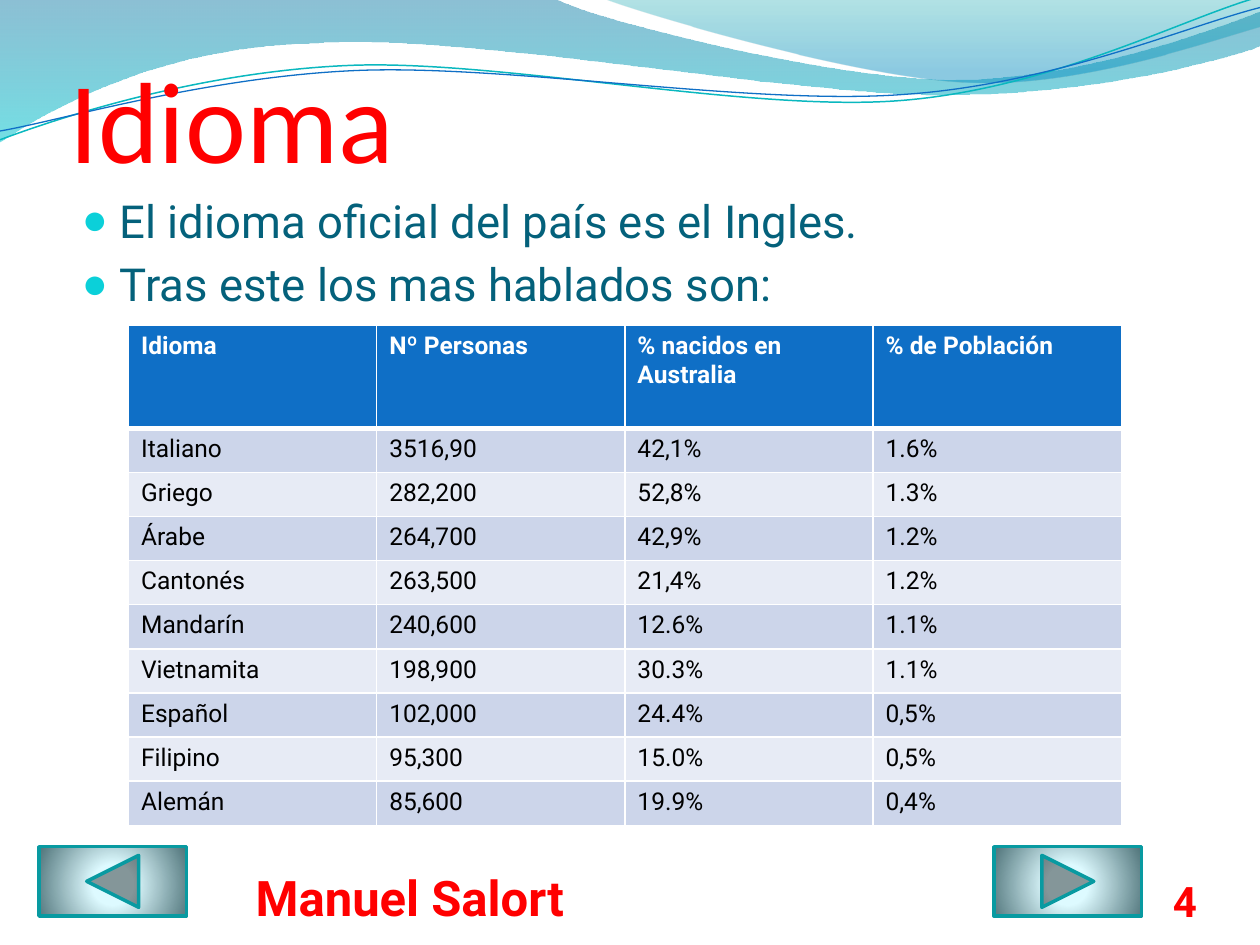
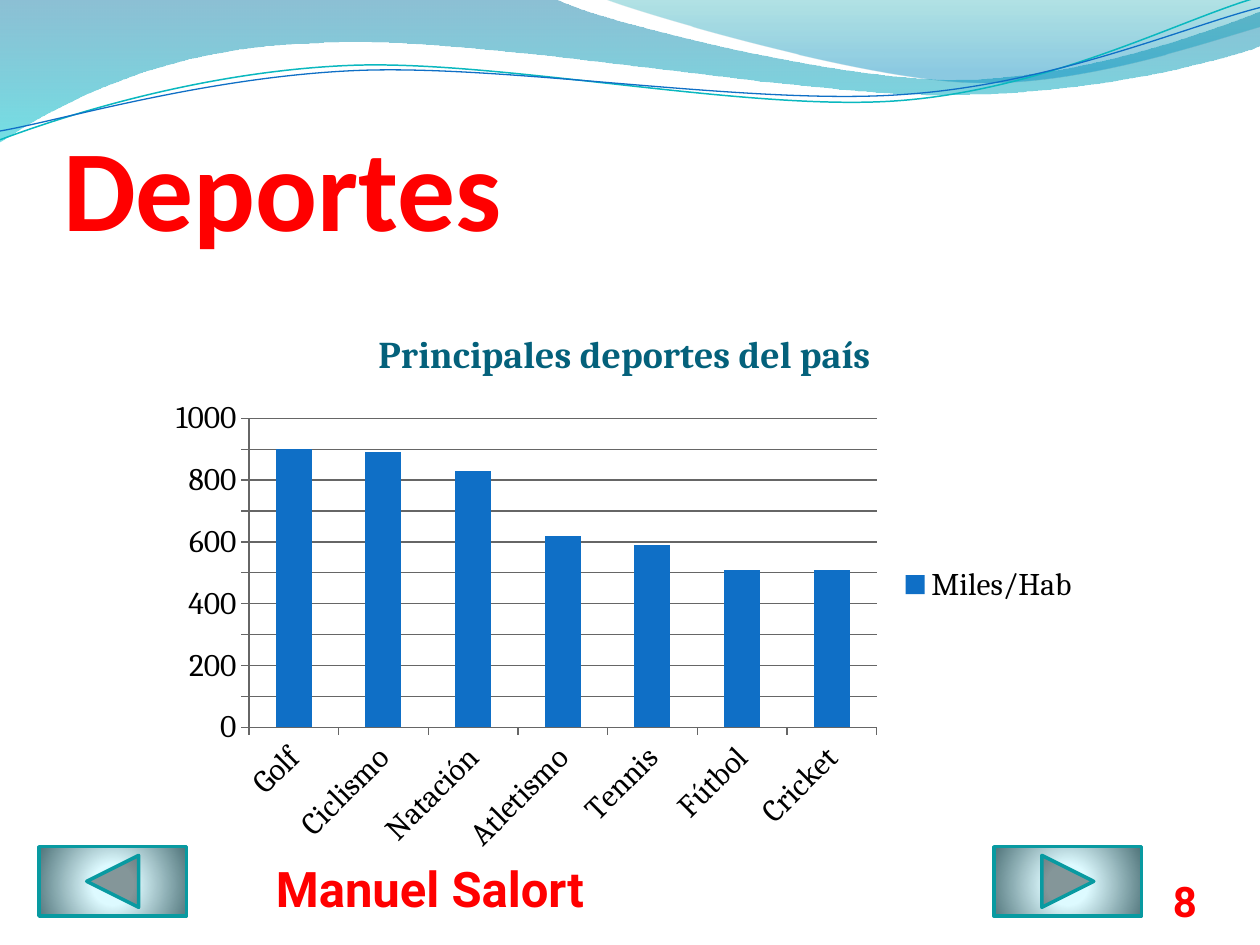
import lxml.etree
import pptx
import pptx.chart.data
import pptx.dml.color
import pptx.enum.chart
import pptx.enum.shapes
import pptx.enum.text
import pptx.oxml
import pptx.oxml.ns
import pptx.util

Inches = pptx.util.Inches
Pt = pptx.util.Pt
RGBColor = pptx.dml.color.RGBColor
SHAPES = pptx.enum.shapes.MSO_SHAPE
ALIGN = pptx.enum.text.PP_ALIGN
ANCHOR = pptx.enum.text.MSO_ANCHOR
qn = pptx.oxml.ns.qn

RED = RGBColor(0xFF, 0x00, 0x00)
TEAL_TEXT = RGBColor(0x04, 0x61, 0x7B)
BLUE = RGBColor(0x0F, 0x6F, 0xC6)
TURQUOISE = RGBColor(0x0A, 0xB8, 0xBF)
BULLET = RGBColor(0x0B, 0xD0, 0xD9)
BUTTON_EDGE = RGBColor(0x08, 0x9A, 0xA1)
BAND_DARK = RGBColor(0xCC, 0xD5, 0xEA)
BAND_LIGHT = RGBColor(0xE7, 0xEB, 0xF5)
AXIS_GRAY = RGBColor(0x66, 0x66, 0x66)
BLACK = RGBColor(0x00, 0x00, 0x00)
WHITE = RGBColor(0xFF, 0xFF, 0xFF)

DOWNWARD = '<a:lin ang="5400000" scaled="0"/>'
CIRCULAR = ('<a:path path="circle"><a:fillToRect l="10000" t="110000" '
            'r="10000" b="100000"/></a:path>')
BUTTON_STOPS = [(0, "DEFBFF", 100), (25, "DDFAFF", 100), (100, "52767C", 100)]

# Each wave: gradient stops (position, colour, opacity), line colour and width,
# then its outline, where 2 numbers are a point and 6 are a Bézier curve.
WAVES = [
    ([(0, "0074A1", 45), (100, "00C6CF", 55)], None, 0,
     [(0, 0), (4.4, -0.01), (4.76, 0.17, 6.64, 0.63, 7.58, 0.63),
      (8.53, 0.63, 9.58, 0.26, 10, 0.09), (10.01, 0.36),
      (9.83, 0.44, 8.7, 0.76, 7.46, 0.75), (6.22, 0.75, 3.82, 0.28, 2.57, 0.34),
      (1.29, 0.36, 0.46, 0.83, -0.01, 1.13)]),
    ([(0, "00A1A9", 30), (80, "008BBF", 45)], None, 0,
     [(4.79, -0.01), (5.09, 0.11, 6.82, 0.62, 7.69, 0.65),
      (8.56, 0.69, 9.61, 0.32, 10, 0.21), (10, 0)]),
    (None, TURQUOISE, 0.85,
     [(0, 1.11), (0.48, 0.93, 1.58, 0.57, 2.77, 0.52),
      (3.95, 0.47, 5.93, 0.89, 7.13, 0.8), (8.33, 0.71, 9.38, 0.15, 9.98, -0.02)]),
    (None, BLUE, 0.75,
     [(0, 1.04), (0.47, 0.96, 1.64, 0.61, 2.83, 0.56),
      (4.03, 0.51, 5.97, 0.84, 7.17, 0.75), (8.36, 0.67, 9.41, 0.21, 10, 0.06)]),
]


def set_gradient(shape, stops, direction):
    """Fill with (position %, colour, opacity %) stops along a direction element."""
    shape.fill.gradient()
    old = shape.element.spPr.find(qn("a:gradFill"))
    stops_xml = "".join(
        f'<a:gs pos="{position * 1000}"><a:srgbClr val="{color}">'
        f'<a:alpha val="{opacity * 1000}"/></a:srgbClr></a:gs>'
        for position, color, opacity in stops)
    new = pptx.oxml.parse_xml(
        f'<a:gradFill {pptx.oxml.ns.nsdecls("a")} rotWithShape="1">'
        f'<a:gsLst>{stops_xml}</a:gsLst>{direction}</a:gradFill>')
    old.getparent().replace(old, new)


def add_footer_text(slide, text, left, top, width, size, alignment):
    box = slide.shapes.add_textbox(Inches(left), Inches(top), Inches(width), Inches(0.4))
    frame = box.text_frame
    frame.word_wrap = True
    frame.vertical_anchor = ANCHOR.BOTTOM
    frame.margin_left = frame.margin_top = frame.margin_right = frame.margin_bottom = 0
    paragraph = frame.paragraphs[0]
    paragraph.alignment = alignment
    run = paragraph.add_run()
    run.text = text
    run.font.name = "Roboto"
    run.font.size = Pt(size)
    run.font.bold = True
    run.font.color.rgb = RED


presentation = pptx.Presentation()
presentation.slide_width = Inches(10)
presentation.slide_height = Inches(7.5)
language_slide = presentation.slides.add_slide(presentation.slide_layouts[1])
sports_slide = presentation.slides.add_slide(presentation.slide_layouts[5])

# Waves, drawn once and moved to the back of the master
master_tree = presentation.slide_master.shapes.element
for index, (stops, line_color, line_width, outline) in enumerate(WAVES):
    points = [(Inches(segment[i]), Inches(segment[i + 1]))
              for segment in outline for i in range(0, len(segment), 2)]
    builder = language_slide.shapes.build_freeform(*points[0])
    builder.add_line_segments(points[1:], close=stops is not None)
    wave = builder.convert_to_shape()
    # Three consecutive straight segments become one curve
    straight_lines = iter(list(wave.element.iter(qn("a:lnTo"))))
    for segment in outline[1:]:
        line = next(straight_lines)
        if len(segment) == 6:
            line.tag = qn("a:cubicBezTo")
            for control in (next(straight_lines), next(straight_lines)):
                line.append(control[0])
                control.getparent().remove(control)
    wave.shadow.inherit = False
    if stops:
        set_gradient(wave, stops, DOWNWARD)
        wave.line.fill.background()
    else:
        wave.fill.background()
        wave.line.color.rgb = line_color
        wave.line.width = Pt(line_width)
    wave.element.nvSpPr.cNvPr.id = 101 + index
    master_tree.insert(2 + index, wave.element)

# Titles
for slide, text, left, top, bold in [
    (language_slide, "Idioma", 0.55, 0.23, False),
    (sports_slide, "Deportes", 0.5, 0.77, True),
]:
    title = slide.shapes.title
    title.left, title.top = Inches(left), Inches(top)
    title.width, title.height = Inches(9), Inches(1.25)
    frame = title.text_frame
    frame.auto_size = pptx.enum.text.MSO_AUTO_SIZE.NONE
    frame.vertical_anchor = ANCHOR.BOTTOM
    frame.margin_left = frame.margin_right = frame.margin_bottom = 0
    frame.margin_top = Inches(0.05)
    paragraph = frame.paragraphs[0]
    paragraph.alignment = ALIGN.LEFT
    run = paragraph.add_run()
    run.text = text
    run.font.name = "Calibri"
    run.font.size = Pt(66)
    run.font.bold = bold
    run.font.color.rgb = RED

# Language list
body = language_slide.placeholders[1]
body.left, body.top = Inches(0.55), Inches(1.48)
body.width, body.height = Inches(9), Inches(4.8)
body.text_frame.auto_size = pptx.enum.text.MSO_AUTO_SIZE.NONE
for index, text in enumerate(["El idioma oficial del país es el Ingles.",
                              "Tras este los mas hablados son:"]):
    frame = body.text_frame
    paragraph = frame.add_paragraph() if index else frame.paragraphs[0]
    paragraph.space_before = Pt(5.2)
    run = paragraph.add_run()
    run.text = text
    run.font.name = "Roboto"
    run.font.size = Pt(26)
    run.font.color.rgb = TEAL_TEXT
    properties = paragraph._p.get_or_add_pPr()
    properties.set("marL", str(Inches(0.3)))
    properties.set("indent", str(Inches(-0.3)))
    bullet_color = lxml.etree.SubElement(properties, qn("a:buClr"))
    lxml.etree.SubElement(bullet_color, qn("a:srgbClr"), val=str(BULLET))
    lxml.etree.SubElement(properties, qn("a:buSzPct"), val="95000")
    lxml.etree.SubElement(properties, qn("a:buChar"), char="●")

# Language table
LANGUAGES = [
    ("Idioma", "Nº Personas", "% nacidos en Australia", "% de Población"),
    ("Italiano", "3516,90", "42,1%", "1.6%"),
    ("Griego", "282,200", "52,8%", "1.3%"),
    ("Árabe", "264,700", "42,9%", "1.2%"),
    ("Cantonés", "263,500", "21,4%", "1.2%"),
    ("Mandarín", "240,600", "12.6%", "1.1%"),
    ("Vietnamita", "198,900", "30.3%", "1.1%"),
    ("Español", "102,000", "24.4%", "0,5%"),
    ("Filipino", "95,300", "15.0%", "0,5%"),
    ("Alemán", "85,600", "19.9%", "0,4%"),
]
HEADER_RULE = (f'<a:lnB {pptx.oxml.ns.nsdecls("a")} w="{Pt(3)}"><a:solidFill>'
               f'<a:srgbClr val="{WHITE}"/></a:solidFill></a:lnB>')
table = language_slide.shapes.add_table(
    len(LANGUAGES), 4, Inches(1.02), Inches(2.58), Inches(7.88), Inches(3.97)).table
for column in table.columns:
    column.width = Inches(1.97)
for row_index, values in enumerate(LANGUAGES):
    header = row_index == 0
    table.rows[row_index].height = Inches(0.82 if header else 0.35)
    for column_index, value in enumerate(values):
        cell = table.cell(row_index, column_index)
        cell.fill.solid()
        band = BAND_DARK if row_index % 2 else BAND_LIGHT
        cell.fill.fore_color.rgb = BLUE if header else band
        if header:
            cell._tc.get_or_add_tcPr().insert(0, pptx.oxml.parse_xml(HEADER_RULE))
        run = cell.text_frame.paragraphs[0].add_run()
        run.text = value
        run.font.name = "Roboto"
        run.font.size = Pt(14)
        run.font.bold = header
        run.font.color.rgb = WHITE if header else BLACK

# Sports chart
chart_data = pptx.chart.data.CategoryChartData()
chart_data.categories = ["Golf", "Ciclismo", "Natación", "Atletismo",
                         "Tennis", "Fútbol", "Cricket"]
chart_data.add_series("Miles/Hab", [900, 890, 830, 620, 590, 510, 510])
chart = sports_slide.shapes.add_chart(
    pptx.enum.chart.XL_CHART_TYPE.COLUMN_CLUSTERED,
    Inches(1.25), Inches(2.42), Inches(7.42), Inches(4.44), chart_data).chart
chart.font.name = "Cambria"
chart.font.size = Pt(18)
chart.font.color.rgb = BLACK
chart.has_title = True
run = chart.chart_title.text_frame.paragraphs[0].add_run()
run.text = "Principales deportes del país"
run.font.name = "Cambria"
run.font.size = Pt(21.6)
run.font.bold = True
run.font.color.rgb = TEAL_TEXT
chart.has_legend = True
chart.legend.position = pptx.enum.chart.XL_LEGEND_POSITION.RIGHT
chart.legend.include_in_layout = False
plot = chart.plots[0]
plot.vary_by_categories = False
plot.gap_width = 150
bars = plot.series[0].format.fill
bars.solid()
bars.fore_color.rgb = BLUE
for axis in (chart.category_axis, chart.value_axis):
    axis.major_tick_mark = pptx.enum.chart.XL_TICK_MARK.OUTSIDE
    axis.format.line.color.rgb = AXIS_GRAY
    axis.format.line.width = Pt(0.75)
chart.value_axis.minimum_scale = 0
chart.value_axis.maximum_scale = 1000
chart.value_axis.major_unit = 100
chart.value_axis.major_gridlines.format.line.color.rgb = AXIS_GRAY
chart.value_axis.major_gridlines.format.line.width = Pt(0.75)

# Footers and navigation buttons
for slide, number, author_left, author_top in [
    (language_slide, "4", 2.03, 6.95),
    (sports_slide, "8", 2.19, 6.88),
]:
    add_footer_text(slide, number, 8.67, 6.95, 0.83, 24, ALIGN.RIGHT)
    add_footer_text(slide, "Manuel Salort", author_left, author_top, 3.67, 28, ALIGN.LEFT)
    for kind, left in [(SHAPES.ACTION_BUTTON_BACK_OR_PREVIOUS, 0.31),
                       (SHAPES.ACTION_BUTTON_FORWARD_OR_NEXT, 7.89)]:
        button = slide.shapes.add_shape(
            kind, Inches(left), Inches(6.72), Inches(1.17), Inches(0.55))
        button.shadow.inherit = False
        set_gradient(button, BUTTON_STOPS, CIRCULAR)
        button.line.color.rgb = BUTTON_EDGE
        button.line.width = Pt(2)

presentation.save("out.pptx")
